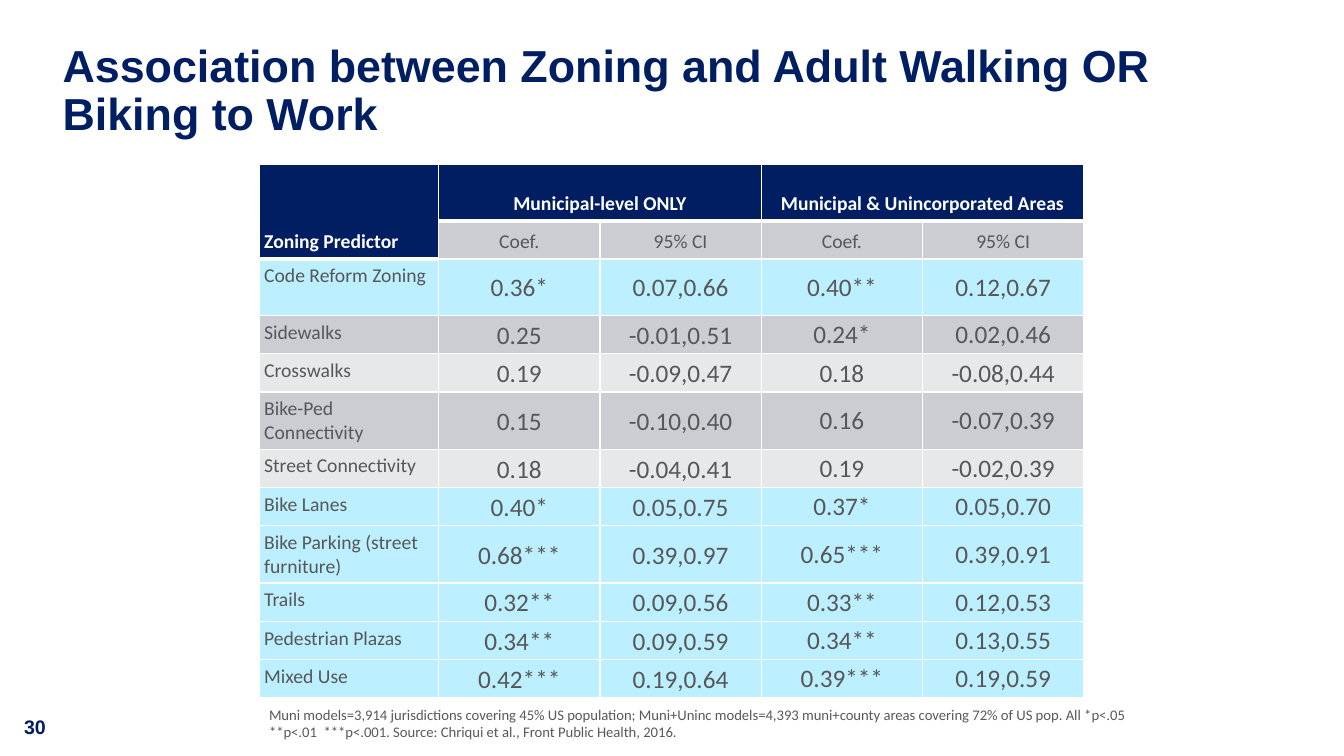
from dataclasses import dataclass

from lxml import etree
from pptx import Presentation
from pptx.dml.color import RGBColor
from pptx.enum import text
from pptx.oxml import ns
from pptx.util import Inches, Pt


@dataclass(frozen=True)
class Theme:
    navy: str = "001E61"
    title_navy: str = "001E62"
    white: str = "FFFFFF"
    body_grey: str = "575757"
    note_grey: str = "595959"
    highlight: str = "BCEFFF"
    dark_band: str = "CCCDD2"
    light_band: str = "E7E8EA"
    heading_font: str = "Arial"
    body_font: str = "Calibri"
    title_size: float = 32
    value_size: float = 18
    label_size: float = 14
    note_size: float = 10.5


@dataclass(frozen=True)
class TextStyle:
    size: float
    color: str
    bold: bool = False
    font: str = "Calibri"
    align: text.PP_ALIGN = text.PP_ALIGN.LEFT
    spacing: float = 1.0


@dataclass(frozen=True)
class CellStyle:
    text: TextStyle
    anchor: text.MSO_ANCHOR
    insets: tuple[float, float, float, float]  # left, top, right, bottom


@dataclass(frozen=True)
class Predictor:
    name: str
    municipal: tuple[str, str]
    combined: tuple[str, str]
    fill: str
    height: float = 0.38


THEME = Theme()
CENTER = text.PP_ALIGN.CENTER
TOP, MIDDLE, BOTTOM = text.MSO_ANCHOR.TOP, text.MSO_ANCHOR.MIDDLE, text.MSO_ANCHOR.BOTTOM
EVEN = (0.05, 0.05, 0.05, 0.05)

CORNER = CellStyle(TextStyle(THEME.label_size, THEME.white, True), BOTTOM, EVEN)
GROUP = CellStyle(TextStyle(THEME.label_size, THEME.white, True, align=CENTER),
                  BOTTOM, (0.09, 0.05, 0.09, 0.05))
SUBHEAD = CellStyle(TextStyle(THEME.label_size, THEME.body_grey, align=CENTER), BOTTOM, EVEN)
NAME = CellStyle(TextStyle(THEME.label_size, THEME.body_grey), TOP, EVEN)
MUNICIPAL = CellStyle(TextStyle(THEME.value_size, THEME.body_grey, align=CENTER, spacing=1.07),
                      MIDDLE, (0.07, 0, 0.07, 0))
COMBINED = CellStyle(TextStyle(THEME.value_size, THEME.body_grey, align=CENTER),
                     MIDDLE, (0.01, 0.01, 0.01, 0))

COLUMN_WIDTHS = (1.78, 1.6, 1.6, 1.6, 1.6)
HEADER_HEIGHTS = (0.56, 0.38)
GROUPS = ("Municipal-level ONLY", "Municipal & Unincorporated Areas")
MEASURES = ("Coef.", "95% CI")
PREDICTORS = (
    Predictor("Code Reform Zoning", ("0.36*", "0.07,0.66"), ("0.40**", "0.12,0.67"),
              THEME.highlight, 0.56),
    Predictor("Sidewalks", ("0.25", "-0.01,0.51"), ("0.24*", "0.02,0.46"), THEME.dark_band),
    Predictor("Crosswalks", ("0.19", "-0.09,0.47"), ("0.18", "-0.08,0.44"), THEME.light_band),
    Predictor("Bike-Ped Connectivity", ("0.15", "-0.10,0.40"), ("0.16", "-0.07,0.39"),
              THEME.dark_band, 0.56),
    Predictor("Street Connectivity", ("0.18", "-0.04,0.41"), ("0.19", "-0.02,0.39"),
              THEME.light_band),
    Predictor("Bike Lanes", ("0.40*", "0.05,0.75"), ("0.37*", "0.05,0.70"), THEME.highlight),
    Predictor("Bike Parking (street furniture)", ("0.68***", "0.39,0.97"),
              ("0.65***", "0.39,0.91"), THEME.highlight, 0.56),
    Predictor("Trails", ("0.32**", "0.09,0.56"), ("0.33**", "0.12,0.53"), THEME.highlight),
    Predictor("Pedestrian Plazas", ("0.34**", "0.09,0.59"), ("0.34**", "0.13,0.55"),
              THEME.highlight),
    Predictor("Mixed Use", ("0.42***", "0.19,0.64"), ("0.39***", "0.19,0.59"), THEME.highlight),
)


def write(frame, content: str, style: TextStyle) -> None:
    frame.text = content
    paragraph = frame.paragraphs[0]
    paragraph.alignment = style.align
    paragraph.line_spacing = style.spacing
    font = paragraph.font
    font.name, font.size, font.bold = style.font, Pt(style.size), style.bold
    font.color.rgb = RGBColor.from_string(style.color)


def set_borders(cell, bottom_width: float) -> None:
    """Draw white cell borders; they must precede the fill in the cell XML."""
    properties = cell._tc.get_or_add_tcPr()
    for index, side in enumerate(("lnL", "lnR", "lnT", "lnB")):
        width = bottom_width if side == "lnB" else 1
        line = etree.Element(ns.qn(f"a:{side}"), w=str(Pt(width)))
        fill = etree.SubElement(line, ns.qn("a:solidFill"))
        etree.SubElement(fill, ns.qn("a:srgbClr"), val=THEME.white)
        properties.insert(index, line)


def format_cell(cell, content: str, style: CellStyle, fill: str) -> None:
    write(cell.text_frame, content, style.text)
    cell.vertical_anchor = style.anchor
    cell.margin_left, cell.margin_top, cell.margin_right, cell.margin_bottom = map(
        Inches, style.insets)
    cell.fill.solid()
    cell.fill.fore_color.rgb = RGBColor.from_string(fill)


def add_title(slide) -> None:
    title = slide.shapes.title
    title.left, title.top, title.width, title.height = map(Inches, (0.62, 0.47, 12.08, 0.89))
    frame = title.text_frame
    frame.margin_left = frame.margin_top = frame.margin_right = frame.margin_bottom = 0
    frame.vertical_anchor = MIDDLE
    frame.word_wrap = True
    frame.auto_size = text.MSO_AUTO_SIZE.NONE
    write(frame, "Association between Zoning and Adult Walking OR Biking to Work",
          TextStyle(THEME.title_size, THEME.title_navy, True, THEME.heading_font, spacing=0.9))


def add_text(slide, box: tuple[float, float, float, float], content: str,
             style: TextStyle) -> None:
    frame = slide.shapes.add_textbox(*map(Inches, box)).text_frame
    frame.word_wrap = True
    write(frame, content, style)


def add_zoning_table(slide) -> None:
    heights = HEADER_HEIGHTS + tuple(predictor.height for predictor in PREDICTORS)
    table = slide.shapes.add_table(
        len(heights), len(COLUMN_WIDTHS), Inches(2.57), Inches(1.63),
        Inches(sum(COLUMN_WIDTHS)), Inches(sum(heights))).table
    table.horz_banding = False
    for column, width in zip(table.columns, COLUMN_WIDTHS):
        column.width = Inches(width)
    for row, height in zip(table.rows, heights):
        row.height = Inches(height)

    table.cell(0, 0).merge(table.cell(1, 0))
    format_cell(table.cell(0, 0), "Zoning Predictor", CORNER, THEME.navy)
    for index, group in enumerate(GROUPS):
        first = 1 + index * len(MEASURES)
        table.cell(0, first).merge(table.cell(0, first + 1))
        format_cell(table.cell(0, first), group, GROUP, THEME.navy)
        for offset, measure in enumerate(MEASURES):
            format_cell(table.cell(1, first + offset), measure, SUBHEAD, THEME.dark_band)

    styles = (NAME, MUNICIPAL, MUNICIPAL, COMBINED, COMBINED)
    for row, predictor in enumerate(PREDICTORS, start=len(HEADER_HEIGHTS)):
        values = (predictor.name, *predictor.municipal, *predictor.combined)
        for column, (value, style) in enumerate(zip(values, styles)):
            format_cell(table.cell(row, column), value, style, predictor.fill)

    for row in range(len(heights)):
        for column in range(len(COLUMN_WIDTHS)):
            under_header = row == 0 or (row == 1 and column == 0)
            set_borders(table.cell(row, column), 3 if under_header else 1)


def main() -> None:
    presentation = Presentation()
    presentation.slide_width, presentation.slide_height = Inches(13.33), Inches(7.5)
    slide = presentation.slides.add_slide(presentation.slide_layouts[5])
    add_text(slide, (0.14, 7.04, 0.66, 0.34), "30",
             TextStyle(THEME.label_size, THEME.navy, True, THEME.heading_font))
    add_title(slide)
    add_zoning_table(slide)
    add_text(slide, (2.57, 6.95, 9, 0.45),
             "Muni models=3,914 jurisdictions covering 45% US population; Muni+Uninc "
             "models=4,393 muni+county areas covering 72% of US pop. All *p<.05 **p<.01  "
             "***p<.001. Source: Chriqui et al., Front Public Health, 2016.",
             TextStyle(THEME.note_size, THEME.note_grey))
    presentation.save("out.pptx")


if __name__ == "__main__":
    main()
